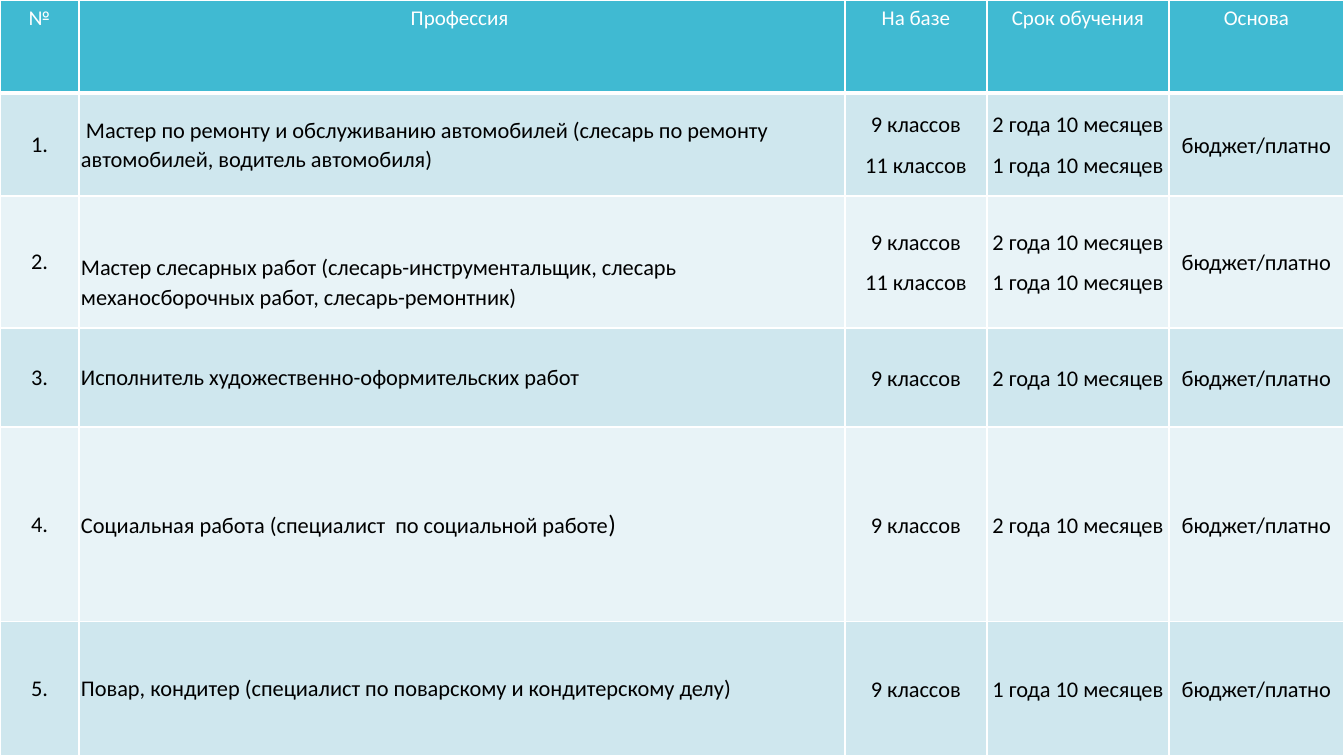
from lxml.etree import SubElement
from pptx import Presentation
from pptx.dml.color import RGBColor
from pptx.enum.text import MSO_ANCHOR, PP_ALIGN
from pptx.oxml.ns import qn
from pptx.util import Pt

WIDTH, HEIGHT = 1344, 756
SCALE = 12192000 / WIDTH
COLORS = {
    "header": "40BAD2",
    "odd": "CFE7EE",
    "even": "E8F3F7",
    "white": "FFFFFF",
    "text": "000000",
}
COLUMN_WIDTHS = [79, 766, 142, 182, 175]
ROW_HEIGHTS = [93, 103, 132, 99, 195, 134]
BASIS = "бюджет/платно"
BOTH_GRADES = "9 классов\n11 классов"
BOTH_TERMS = "2 года 10 месяцев\n1 года 10 месяцев"
ROWS = [
    ["№", "Профессия ", "На базе", "Срок обучения", "Основа"],
    ["1.", " Мастер по ремонту и обслуживанию автомобилей (слесарь по ремонту "
     "автомобилей, водитель автомобиля)", BOTH_GRADES, BOTH_TERMS, BASIS],
    ["2.", "Мастер слесарных работ (слесарь-инструментальщик, слесарь "
     "механосборочных работ, слесарь-ремонтник)", BOTH_GRADES, BOTH_TERMS, BASIS],
    ["3.", "Исполнитель художественно-оформительских работ",
     "9 классов", "2 года 10 месяцев", BASIS],
    ["4.", "Социальная работа (специалист  по социальной работе",
     "9 классов", "2 года 10 месяцев", BASIS],
    ["5.", "Повар, кондитер (специалист по поварскому и кондитерскому делу)",
     "9 классов", "1 года 10 месяцев", BASIS],
]


def px(length):
    return int(length * SCALE)


def add_borders(cell, bottom_points):
    """Draw white cell borders, 1 pt wide except for the bottom one."""
    properties = cell._tc.get_or_add_tcPr()
    for side in "LRTB":
        points = bottom_points if side == "B" else 1
        line = SubElement(properties, qn(f"a:ln{side}"), w=str(Pt(points)))
        fill = SubElement(line, qn("a:solidFill"))
        SubElement(fill, qn("a:srgbClr"), val=COLORS["white"])


presentation = Presentation()
presentation.slide_width = px(WIDTH)
presentation.slide_height = px(HEIGHT)
slide = presentation.slides.add_slide(presentation.slide_layouts[6])

table = slide.shapes.add_table(
    len(ROWS), len(COLUMN_WIDTHS), 0, 0, px(WIDTH), px(HEIGHT)).table
for column, width in zip(table.columns, COLUMN_WIDTHS):
    column.width = px(width)
for row, height in zip(table.rows, ROW_HEIGHTS):
    row.height = px(height)

for row_index, texts in enumerate(ROWS):
    is_header = row_index == 0
    fill_name = "header" if is_header else "odd" if row_index % 2 else "even"
    for column_index, text in enumerate(texts):
        cell = table.cell(row_index, column_index)
        is_profession = column_index == 1 and not is_header
        add_borders(cell, 3 if is_header else 1)
        cell.fill.solid()
        cell.fill.fore_color.rgb = RGBColor.from_string(COLORS[fill_name])
        cell.vertical_anchor = MSO_ANCHOR.TOP if is_header else MSO_ANCHOR.MIDDLE
        if column_index > 0 and not is_header:
            inset = px(2 if is_profession else 0)
            cell.margin_left = cell.margin_right = inset
            cell.margin_top = cell.margin_bottom = inset
        cell.text_frame.text = text
        spaced = not is_header and (column_index > 1 or is_profession and row_index < 3)
        for paragraph in cell.text_frame.paragraphs:
            paragraph.alignment = PP_ALIGN.LEFT if is_profession else PP_ALIGN.CENTER
            if spaced:
                paragraph.line_spacing = 1.07
                paragraph.space_after = Pt(8)
            font = paragraph.runs[0].font
            font.name = "Calibri"
            font.size = Pt(15 if is_header else 16)
            font.bold = False
            font.color.rgb = RGBColor.from_string(COLORS["white" if is_header else "text"])

# The fitter's trade sits below the middle of its row
table.cell(2, 1).margin_top = px(42)

# The closing bracket of the social work trade is larger
bracket = table.cell(4, 1).text_frame.paragraphs[0].add_run()
bracket.text = ")"
bracket.font.name = "Calibri"
bracket.font.size = Pt(18)
bracket.font.bold = False
bracket.font.color.rgb = RGBColor.from_string(COLORS["text"])

presentation.save("out.pptx")
